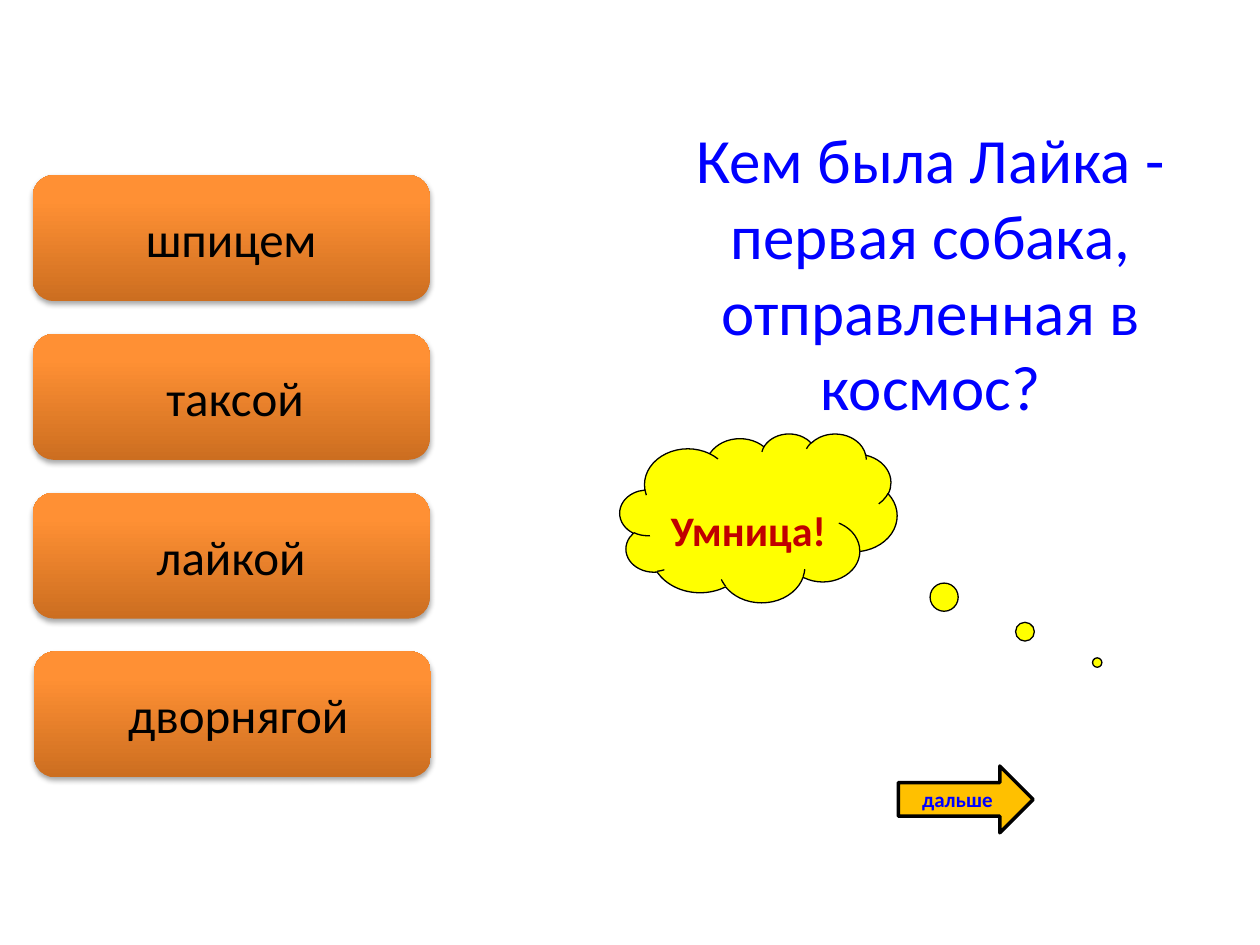
from lxml import etree
from pptx import Presentation
from pptx.dml.color import RGBColor
from pptx.enum.shapes import MSO_SHAPE
from pptx.enum.text import MSO_ANCHOR, PP_ALIGN
from pptx.oxml.ns import qn
from pptx.util import Inches, Pt

CLOUD = MSO_SHAPE.CLOUD_CALLOUT
ARROW = MSO_SHAPE.RIGHT_ARROW
ROUND = MSO_SHAPE.ROUNDED_RECTANGLE
TOP, MIDDLE = MSO_ANCHOR.TOP, MSO_ANCHOR.MIDDLE
CENTER = PP_ALIGN.CENTER

COLORS = {
    "black": "000000",
    "blue": "0000FF",
    "red": "C00000",
    "yellow": "FFFF00",
    "gold": "FFC000",
    "dark": "CC6E20",
    "orange": "FF9034",
    "light": "FF9136",
}
STOPS = [(0, "dark"), (80, "orange"), (100, "light")]

# Answer, left edge, left text inset
ANSWERS = [
    ("шпицем", 0.26, 0.1),
    ("таксой", 0.26, 0.16),
    ("лайкой", 0.26, 0.1),
    ("дворнягой", 0.27, 0.19),
]


def rgb(name):
    return RGBColor.from_string(COLORS[name])


def write(shape, text, size, color, bold=False, anchor=MIDDLE):
    frame = shape.text_frame
    frame.word_wrap = True
    frame.vertical_anchor = anchor
    frame.text = text
    par = frame.paragraphs[0]
    par.alignment = CENTER
    font = par.font
    font.name = "Calibri"
    font.size = Pt(size)
    font.bold = bold
    font.color.rgb = rgb(color)
    return frame


def add_shape(slide, kind, left, top, width, height):
    shape = slide.shapes.add_shape(
        kind, Inches(left), Inches(top), Inches(width), Inches(height))
    shape.shadow.inherit = False
    return shape


def paint(shape, fill, weight):
    shape.fill.solid()
    shape.fill.fore_color.rgb = rgb(fill)
    shape.line.color.rgb = rgb("black")
    shape.line.width = Pt(weight)


def add_color(parent, name):
    return etree.SubElement(parent, qn("a:srgbClr"), val=COLORS[name])


def shade(shape):
    """Fill with the upward orange gradient."""
    shape.fill.gradient()
    shape.fill.gradient_angle = 90
    stops = shape._element.spPr.find(".//" + qn("a:gsLst"))
    for stop in list(stops):
        stops.remove(stop)
    for pos, name in STOPS:
        add_color(etree.SubElement(stops, qn("a:gs"), pos=str(pos * 1000)), name)


def drop_shadow(shape):
    effects = shape._element.spPr.find(qn("a:effectLst"))
    outer = etree.SubElement(
        effects, qn("a:outerShdw"), blurRad=str(Pt(3.1)), dist=str(Pt(1.8)),
        dir="5400000", rotWithShape="0")
    etree.SubElement(add_color(outer, "black"), qn("a:alpha"), val="35000")


def add_answer(slide, text, left, top, inset):
    button = add_shape(slide, ROUND, left, top, 3.15, 1)
    shade(button)
    button.line.fill.background()
    drop_shadow(button)
    write(button, text, 28, "black").margin_left = Inches(inset)


def add_praise(slide):
    cloud = add_shape(slide, CLOUD, 4.92, 3.44, 2.2, 1.34)
    cloud.adjustments[0] = 1.222
    cloud.adjustments[1] = 0.857
    paint(cloud, "yellow", 0.75)
    frame = write(cloud, "Умница!", 24, "red", True, TOP)
    frame.margin_top = Inches(0.36)


def add_next(slide):
    arrow = add_shape(slide, ARROW, 7.13, 6.08, 1.07, 0.53)
    paint(arrow, "gold", 2)
    write(arrow, "дальше", 12, "blue", True)


def add_question(slide):
    box = slide.shapes.add_textbox(
        Inches(5.14), Inches(0.91), Inches(4.49), Inches(2.52))
    write(box, "Кем была Лайка - первая собака, отправленная в космос?",
          36, "blue", anchor=TOP)


def main():
    deck = Presentation()
    deck.slide_width, deck.slide_height = Inches(10), Inches(7.5)
    slide = deck.slides.add_slide(deck.slide_layouts[6])
    add_praise(slide)
    add_next(slide)
    for row, (text, left, inset) in enumerate(ANSWERS):
        add_answer(slide, text, left, 1.39 + 1.26 * row, inset)
    add_question(slide)
    deck.save("out.pptx")


if __name__ == "__main__":
    main()
